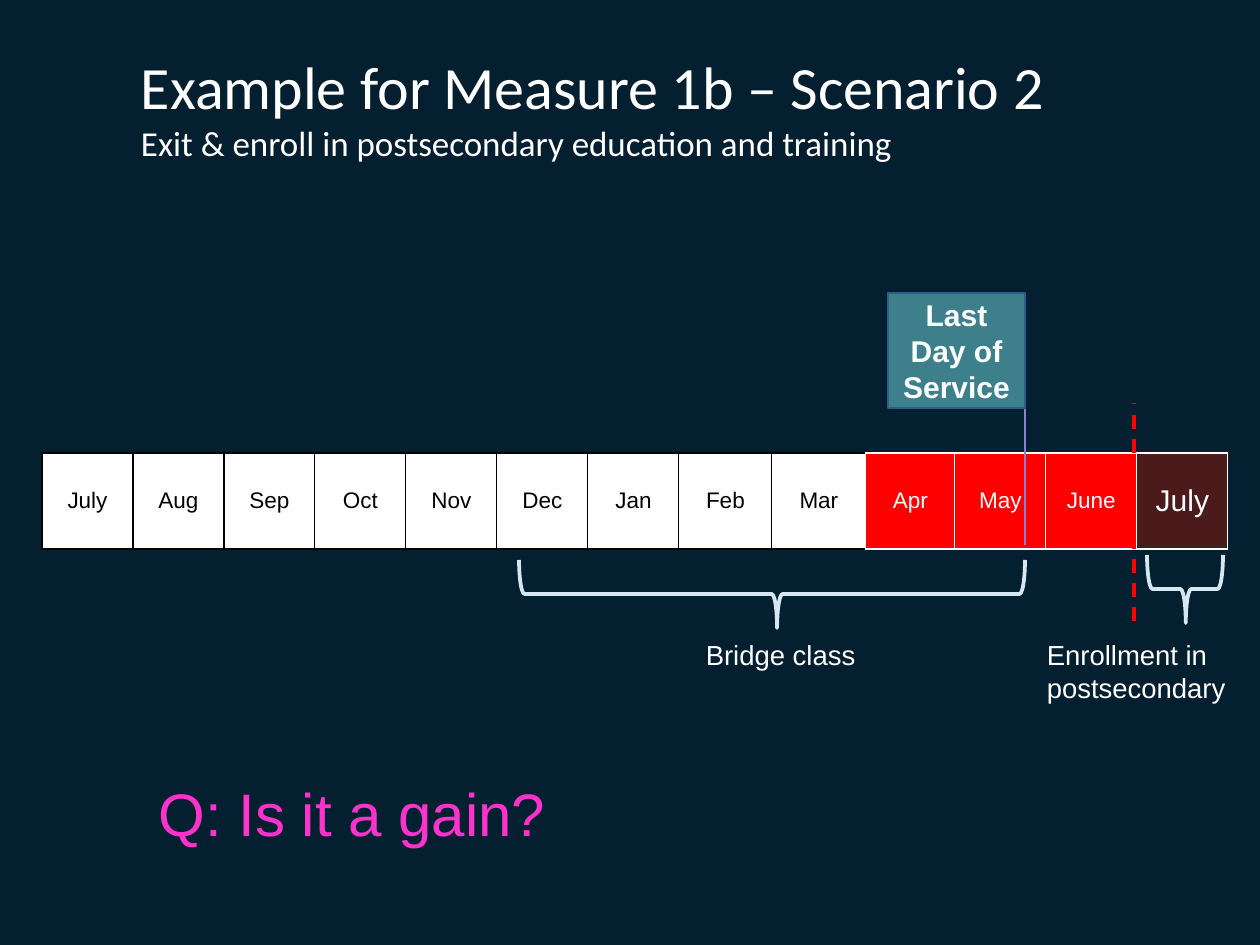
from lxml import etree
from pptx import Presentation, util as u
from pptx.dml.color import RGBColor
from pptx.enum import dml, shapes, text
from pptx.oxml import ns

px = 10160


def hue(code):
    return RGBColor.from_string(code)


def write(para, words, size, code="FFFFFF", face="Arial", bold=False):
    run = para.add_run()
    run.text = words
    run.font.size = u.Pt(size)
    run.font.name = face
    run.font.bold = bold
    run.font.color.rgb = hue(code)


deck = Presentation()
deck.slide_width, deck.slide_height = 1260 * px, 945 * px
slide = deck.slides.add_slide(deck.slide_layouts[6])
slide.background.fill.solid()
slide.background.fill.fore_color.rgb = hue("041F30")
items = slide.shapes

months = ["July", "Aug", "Sep", "Oct", "Nov", "Dec", "Jan", "Feb", "Mar",
          "Apr", "May", "June", "July"]
wide = [91] * 7 + [93, 94, 89] + [91] * 3
fills = ["FFFFFF"] * 9 + ["FF0000"] * 3 + ["4B1A1A"]
grid = items.add_table(1, 13, 42 * px, 453 * px, sum(wide) * px, 96 * px).table
grid.first_row = grid.horz_banding = False
grid.rows[0].height = 96 * px
for i, month in enumerate(months):
    grid.columns[i].width = wide[i] * px
    cell = grid.cell(0, i)
    cell.vertical_anchor = text.MSO_ANCHOR.MIDDLE
    cell.margin_left = cell.margin_right = 13 * px
    cell.margin_top = cell.margin_bottom = 6 * px
    para = cell.text_frame.paragraphs[0]
    para.alignment = text.PP_ALIGN.CENTER
    write(para, month, 24 if i == 12 else 18, "000000" if i < 9 else "FFFFFF")
    props = cell._tc.get_or_add_tcPr()
    for side in ["lnL", "lnR", "lnT", "lnB"]:
        white = i > 8 or (i == 8 and side == "lnR")
        edge = etree.SubElement(props, ns.qn("a:" + side), w="12700")
        solid = etree.SubElement(edge, ns.qn("a:solidFill"))
        etree.SubElement(solid, ns.qn("a:srgbClr"), val="FFFFFF" if white else "000000")
    cell.fill.solid()
    cell.fill.fore_color.rgb = hue(fills[i])

title = items.add_textbox(128 * px, 60 * px, 1038 * px, 117 * px).text_frame
title.word_wrap = True
title.vertical_anchor = text.MSO_ANCHOR.BOTTOM
title.margin_left = title.margin_right = 13 * px
title.margin_top = title.margin_bottom = 13 * px
para = title.paragraphs[0]
write(para, "Example for Measure 1b – Scenario 2", 48, face="Calibri")
para.add_line_break()
write(para, "Exit & enroll in postsecondary education and training", 28, face="Calibri")

for x, y, w, h in [(738, 341, 68, 506), (1151, 551, 68, 76)]:
    brace = items.add_shape(shapes.MSO_SHAPE.RIGHT_BRACE, x * px, y * px, w * px, h * px)
    brace.rotation = 90
    brace.adjustments[0] = 0.08
    brace.adjustments[1] = 0.49
    brace.shadow.inherit = False
    brace.fill.background()
    brace.line.color.rgb = hue("D6E6F2")
    brace.line.width = u.Pt(3)

for words, x, y, w, h, size, code, wrap in [
    ("Bridge class", 697, 634, 169, 42, 22, "FFFFFF", False),
    ("Q: Is it a gain?", 150, 772, 410, 82, 48, "FF33CC", False),
    ("Enrollment in postsecondary", 1038, 634, 210, 76, 22, "FFFFFF", True),
]:
    frame = items.add_textbox(x * px, y * px, w * px, h * px).text_frame
    frame.word_wrap = wrap
    frame.auto_size = text.MSO_AUTO_SIZE.SHAPE_TO_FIT_TEXT
    write(frame.paragraphs[0], words, size, code)

flag = items.add_shape(shapes.MSO_SHAPE.RECTANGLE, 888 * px, 293 * px, 137 * px, 115 * px)
flag.shadow.inherit = False
flag.fill.solid()
flag.fill.fore_color.rgb = hue("3D808C")
flag.line.color.rgb = hue("2B5F8A")
flag.line.width = u.Pt(2)
flag.text_frame.word_wrap = True
flag.text_frame.vertical_anchor = text.MSO_ANCHOR.MIDDLE
para = flag.text_frame.paragraphs[0]
para.alignment = text.PP_ALIGN.CENTER
write(para, "Last Day of Service", 24, bold=True)

for x, top, end, code, thick, dash in [
    (1134, 621, 403, "FF0000", 2.75, dml.MSO_LINE.DASH),
    (1025, 409, 545, "8B81D2", 2, dml.MSO_LINE.SOLID),
]:
    rule = items.add_connector(shapes.MSO_CONNECTOR.STRAIGHT, x * px, top * px, x * px, end * px)
    rule.line.color.rgb = hue(code)
    rule.line.width = u.Pt(thick)
    rule.line.dash_style = dash
    etree.SubElement(rule._element.spPr, ns.qn("a:effectLst"))

deck.save("out.pptx")
